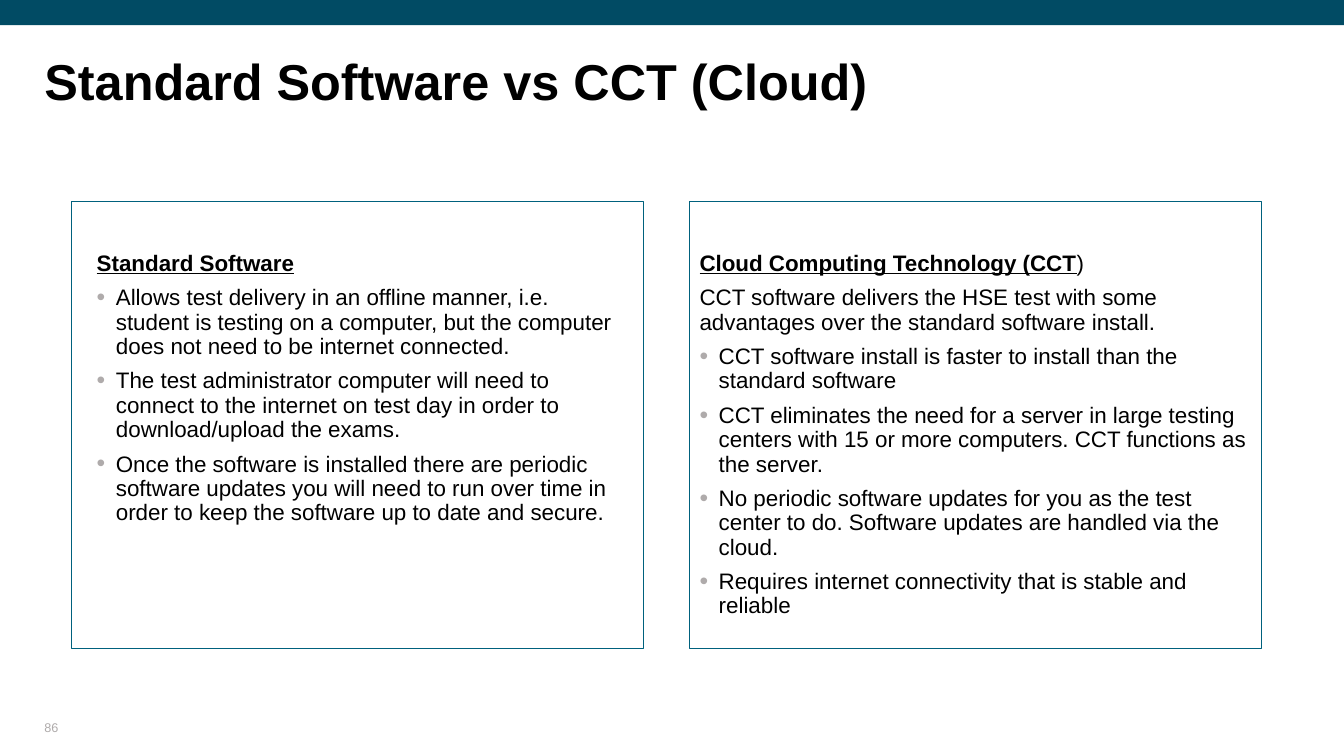
import dataclasses

import pptx
import pptx.dml.color
import pptx.enum.shapes
import pptx.enum.text
import pptx.oxml
import pptx.oxml.ns
import pptx.util

Inches = pptx.util.Inches
Pt = pptx.util.Pt
Color = pptx.dml.color.RGBColor.from_string


@dataclasses.dataclass(frozen=True)
class Theme:
    font: str = "Arial"
    band: str = "014B64"
    border: str = "00617D"
    text: str = "000000"
    muted: str = "AFABAB"
    title_size: int = 36
    body_size: int = 16
    number_size: int = 9
    line_spacing: float = 0.9


theme = Theme()


def set_font(paragraph, size, color, bold=False):
    paragraph.alignment = pptx.enum.text.PP_ALIGN.LEFT
    paragraph.font.name = theme.font
    paragraph.font.size = Pt(size)
    paragraph.font.bold = bold
    paragraph.font.color.rgb = Color(color)


def add_bullet(paragraph):
    properties = paragraph._p.get_or_add_pPr()
    properties.set("marL", str(Inches(0.19)))
    properties.set("indent", str(-Inches(0.19)))
    namespace = pptx.oxml.ns.nsdecls("a")
    for element in (
        f'<a:buClr {namespace}><a:srgbClr val="{theme.muted}"/></a:buClr>',
        f'<a:buSzPct {namespace} val="110000"/>',
        f'<a:buFont {namespace} typeface="{theme.font}"/>',
        f'<a:buChar {namespace} char="•"/>',
    ):
        properties.append(pptx.oxml.parse_xml(element))


panels = [
    {
        "heading": "Standard Software",
        "ending": "",
        "inset": 0.25,
        "intro": [],
        "bullets": [
            "Allows test delivery in an offline manner, i.e. student is testing on a computer, "
            "but the computer does not need to be internet connected.",
            "The test administrator computer will need to connect to the internet on test day "
            "in order to download/upload the exams.",
            "Once the software is installed there are periodic software updates you will need "
            "to run over time in order to keep the software up to date and secure.",
        ],
    },
    {
        "heading": "Cloud Computing Technology (CCT",
        "ending": ")",
        "inset": 0.1,
        "intro": [
            "CCT software delivers the HSE test with some advantages over the standard "
            "software install.",
        ],
        "bullets": [
            "CCT software install is faster to install than the standard software",
            "CCT eliminates the need for a server in large testing centers with 15 or more "
            "computers. CCT functions as the server.",
            "No periodic software updates for you as the test center to do. Software updates "
            "are handled via the cloud.",
            "Requires internet connectivity that is stable and reliable",
        ],
    },
]

presentation = pptx.Presentation()
presentation.slide_width = Inches(13.33)
presentation.slide_height = Inches(7.5)
slide = presentation.slides.add_slide(presentation.slide_layouts[5])

band = slide.shapes.add_shape(
    pptx.enum.shapes.MSO_SHAPE.RECTANGLE, 0, 0, presentation.slide_width, Inches(0.25)
)
band.shadow.inherit = False
band.fill.solid()
band.fill.fore_color.rgb = Color(theme.band)
band.line.fill.background()

margin = 0.44
title = slide.shapes.title
title.left, title.top = Inches(margin), Inches(0.57)
title.width, title.height = Inches(12.32), Inches(1.27)
number = slide.shapes.add_textbox(Inches(margin), Inches(7.05), Inches(3), Inches(0.24))

for shape, text, size, color, anchor in (
    (title, "Standard Software vs CCT (Cloud)", theme.title_size, theme.text, "TOP"),
    (number, "86", theme.number_size, theme.muted, "BOTTOM"),
):
    frame = shape.text_frame
    frame.text = text
    frame.word_wrap = True
    frame.auto_size = pptx.enum.text.MSO_AUTO_SIZE.NONE
    frame.vertical_anchor = pptx.enum.text.MSO_ANCHOR[anchor]
    frame.margin_left = frame.margin_right = frame.margin_top = frame.margin_bottom = 0
    set_font(frame.paragraphs[0], size, color, bold=shape is title)
title.text_frame.paragraphs[0].line_spacing = theme.line_spacing

panel_left, panel_width, panel_pitch = 0.71, 5.67, 6.13
for column, panel in enumerate(panels):
    box = slide.shapes.add_shape(
        pptx.enum.shapes.MSO_SHAPE.RECTANGLE,
        Inches(panel_left + column * panel_pitch),
        Inches(2),
        Inches(panel_width),
        Inches(4.43),
    )
    box.shadow.inherit = False
    box.fill.background()
    box.line.color.rgb = Color(theme.border)
    box.line.width = Pt(0.75)
    frame = box.text_frame
    frame.word_wrap = True
    frame.vertical_anchor = pptx.enum.text.MSO_ANCHOR.TOP
    frame.margin_left = frame.margin_right = Inches(panel["inset"])
    frame.margin_top, frame.margin_bottom = Inches(0.5), Inches(0.05)

    heading = frame.paragraphs[0]
    heading.line_spacing = theme.line_spacing
    set_font(heading, theme.body_size, theme.text)
    heading_run = heading.add_run()
    heading_run.text = panel["heading"]
    heading_run.font.bold = heading_run.font.underline = True
    if panel["ending"]:
        heading.add_run().text = panel["ending"]

    for text in panel["intro"] + panel["bullets"]:
        paragraph = frame.add_paragraph()
        paragraph.text = text
        paragraph.line_spacing = theme.line_spacing
        paragraph.space_before = Pt(7.5)
        if text in panel["bullets"]:
            add_bullet(paragraph)
        set_font(paragraph, theme.body_size, theme.text)

presentation.save("out.pptx")
